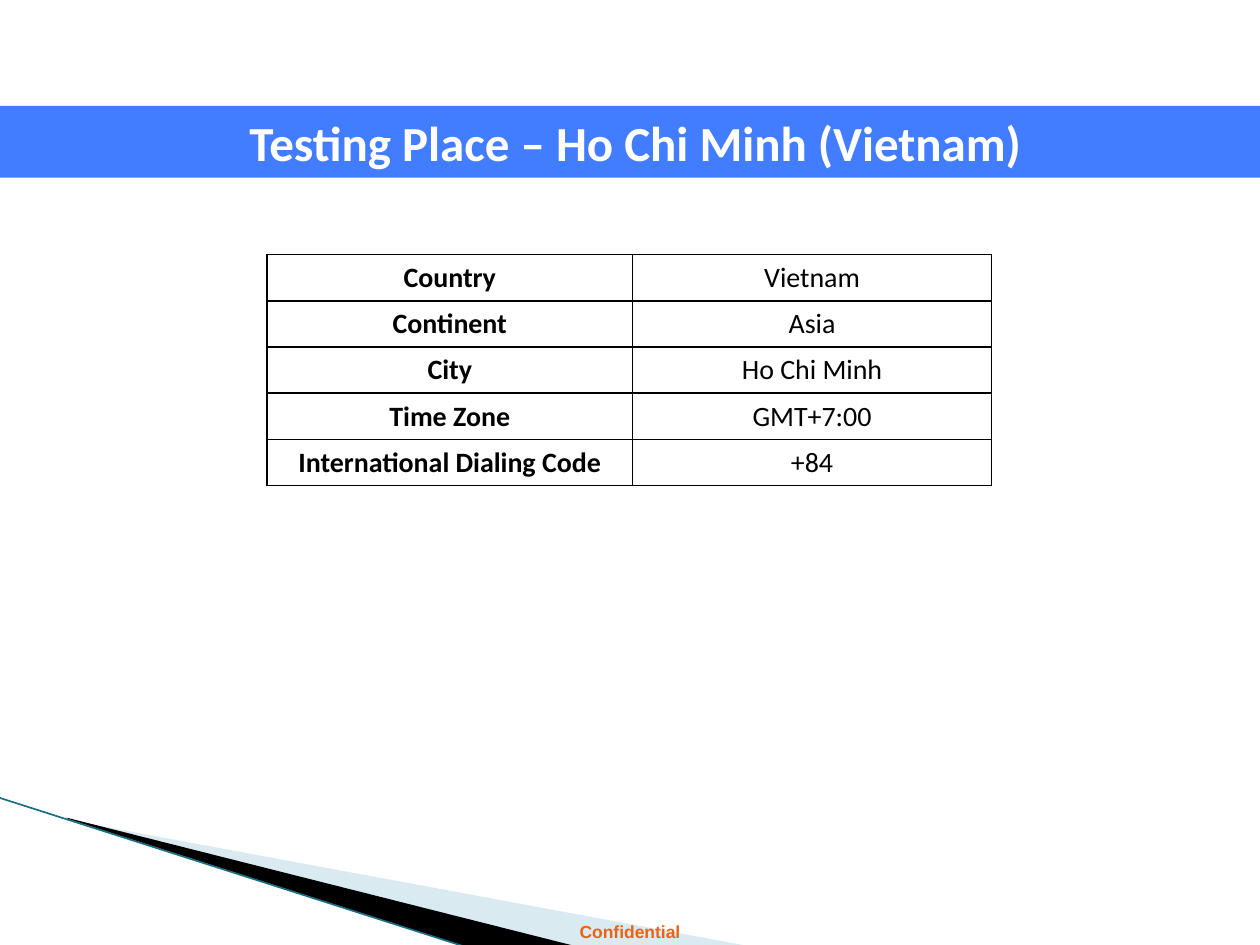
from lxml.etree import SubElement
from pptx import Presentation
from pptx.dml.color import RGBColor
from pptx.enum.shapes import MSO_CONNECTOR
from pptx.enum.text import MSO_ANCHOR, MSO_AUTO_SIZE, PP_ALIGN
from pptx.oxml.ns import qn
from pptx.util import Inches, Pt

# Content
TITLE = "Testing Place – Ho Chi Minh (Vietnam)"
FOOTER = "Confidential"
FACTS = [
    ("Country", "Vietnam"),
    ("Continent", "Asia"),
    ("City", "Ho Chi Minh"),
    ("Time Zone", "GMT+7:00"),
    ("International Dialing Code", "+84"),
]
COLUMN_WIDTHS = (2.9, 2.85)
TABLE_HEIGHT = 1.83
# Corner wedges: points, colour, opacity in percent
WEDGES = [
    ([(0.55, 6.51), (5.95, 7.51), (4.56, 7.51), (0.55, 6.5)], "A0CBDC", 40),
    ([(0.53, 6.49), (4.57, 7.51), (3.72, 7.52), (0.54, 6.5)], "000000", 100),
]


def rgb(value):
    return RGBColor.from_string(value)


def write(frame, text, size, color, font="Calibri", bold=True):
    paragraph = frame.paragraphs[0]
    paragraph.alignment = PP_ALIGN.CENTER
    run = paragraph.add_run()
    run.text = text
    run.font.name = font
    run.font.size = Pt(size)
    run.font.bold = bold
    run.font.color.rgb = rgb(color)


def add_wedge(shapes, points, color, opacity):
    corners = [(Inches(x), Inches(y)) for x, y in points]
    builder = shapes.build_freeform(*corners[0])
    builder.add_line_segments(corners[1:], close=True)
    wedge = builder.convert_to_shape()
    wedge.shadow.inherit = False
    wedge.line.fill.background()
    wedge.fill.solid()
    wedge.fill.fore_color.rgb = rgb(color)
    if opacity < 100:
        color_node = wedge.fill._xPr.find(qn("a:solidFill"))[0]
        SubElement(color_node, qn("a:alpha"), val=str(opacity * 1000))


def add_borders(cell, color="000000", width=1):
    properties = cell._tc.get_or_add_tcPr()
    for index, side in enumerate(("lnL", "lnR", "lnT", "lnB")):
        border = SubElement(properties, qn(f"a:{side}"), w=str(Pt(width)))
        fill = SubElement(border, qn("a:solidFill"))
        SubElement(fill, qn("a:srgbClr"), val=color)
        properties.insert(index, border)


def main():
    prs = Presentation()
    prs.slide_width, prs.slide_height = Inches(10), Inches(7.5)
    slide = prs.slides.add_slide(prs.slide_layouts[5])
    shapes = slide.shapes

    # Corner decoration
    for points, color, opacity in WEDGES:
        add_wedge(shapes, points, color, opacity)
    edge = shapes.add_connector(MSO_CONNECTOR.STRAIGHT, Inches(-0.01),
                                Inches(6.33), Inches(3.71), Inches(7.52))
    edge.line.color.rgb = rgb("1A6E82")
    edge.line.width = Pt(0.95)
    SubElement(edge._element.spPr, qn("a:effectLst"))

    # Footer
    footer = shapes.add_textbox(0, Inches(7.26), Inches(10), Inches(0.27))
    footer.text_frame.word_wrap = True
    footer.text_frame.vertical_anchor = MSO_ANCHOR.MIDDLE
    write(footer.text_frame, FOOTER, 10, "EB6312", font="Arial")

    # Title band
    title = shapes.title
    title.left, title.top = 0, Inches(0.84)
    title.width, title.height = Inches(10), Inches(0.57)
    title.fill.solid()
    title.fill.fore_color.rgb = rgb("437DFF")
    heading = title.text_frame
    heading.auto_size = MSO_AUTO_SIZE.NONE
    heading.vertical_anchor = MSO_ANCHOR.MIDDLE
    heading.margin_left = Inches(0.18)
    write(heading, TITLE, 28, "FFFFFF")

    # Table of facts
    table = shapes.add_table(len(FACTS), len(COLUMN_WIDTHS), Inches(2.12),
                             Inches(2.02), Inches(sum(COLUMN_WIDTHS)),
                             Inches(TABLE_HEIGHT)).table
    table.first_row = table.horz_banding = False
    for column, width in zip(table.columns, COLUMN_WIDTHS):
        column.width = Inches(width)
    for row, fact in enumerate(FACTS):
        for column, text in enumerate(fact):
            cell = table.cell(row, column)
            cell.vertical_anchor = MSO_ANCHOR.MIDDLE
            cell.fill.background()
            add_borders(cell)
            write(cell.text_frame, text, 16, "000000", bold=column == 0)

    prs.save("out.pptx")


if __name__ == "__main__":
    main()
